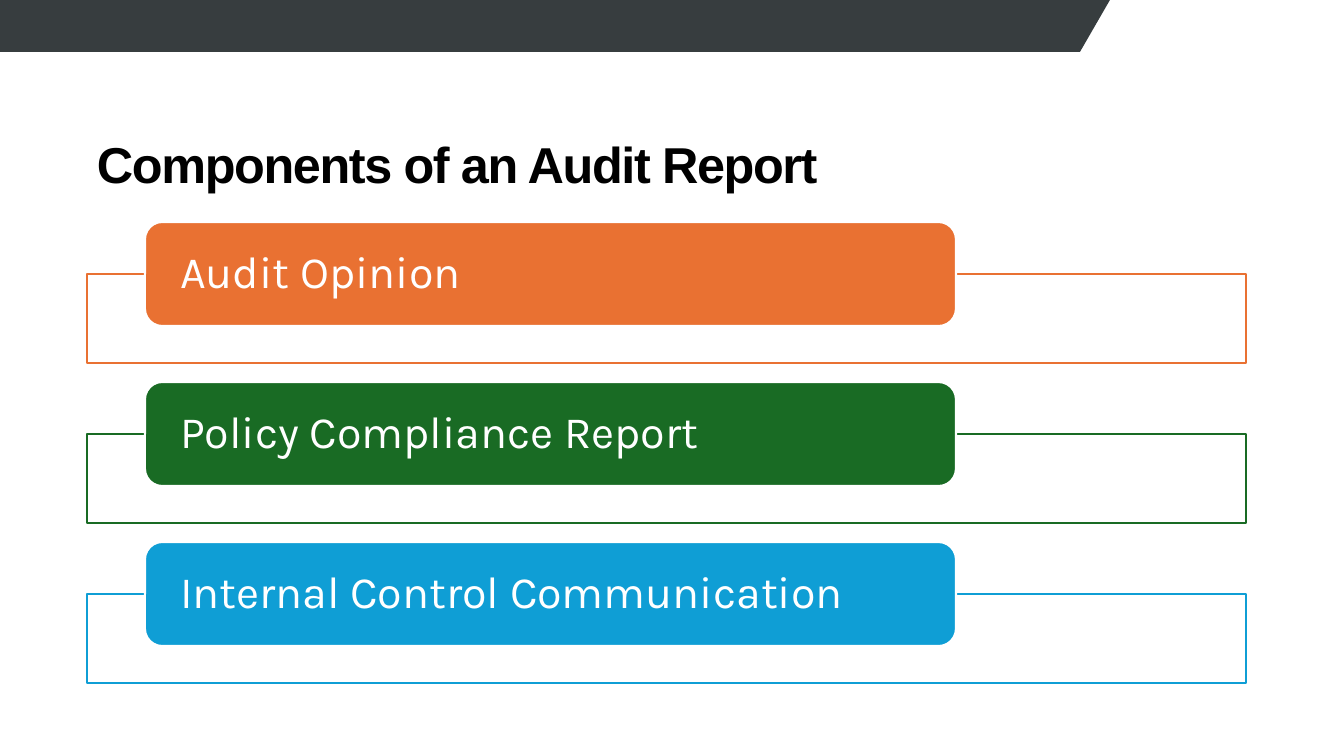
from pptx import Presentation
from pptx.dml.color import RGBColor
from pptx.enum.shapes import MSO_SHAPE
from pptx.enum.text import MSO_ANCHOR, MSO_AUTO_SIZE, PP_ALIGN
from pptx.util import Pt

RECTANGLE = MSO_SHAPE.RECTANGLE
ROUNDED = MSO_SHAPE.ROUNDED_RECTANGLE
MIDDLE, BOTTOM = MSO_ANCHOR.MIDDLE, MSO_ANCHOR.BOTTOM
FIXED_SIZE = MSO_AUTO_SIZE.NONE
LEFT = PP_ALIGN.LEFT

EMU_PER_PX = 914400 / 100.8
COLORS = {
    "black": "000000",
    "white": "FFFFFF",
    "banner": "373D3F",
    "orange": "E97132",
    "green": "196B24",
    "blue": "0F9ED5",
}
COMPONENTS = [
    ("Audit Opinion", "orange"),
    ("Policy Compliance Report", "green"),
    ("Internal Control Communication", "blue"),
]
FIRST_ROW_TOP = 222
ROW_PITCH = 160


def px(length):
    return round(length * EMU_PER_PX)


def color(name):
    return RGBColor.from_string(COLORS[name])


def write_text(shape, text, *, font, size, fill, anchor, bold=False,
               inset=10, inset_y=5, spacing=0):
    """Fill a shape with one left-aligned line; spacing is in points."""
    frame = shape.text_frame
    frame.word_wrap = True
    frame.auto_size = FIXED_SIZE
    frame.vertical_anchor = anchor
    frame.margin_left = frame.margin_right = px(inset)
    frame.margin_top = frame.margin_bottom = px(inset_y)
    para = frame.paragraphs[0]
    para.alignment = LEFT
    para.line_spacing = 0.9
    span = para.add_run()
    span.text = text
    span.font.name = font
    span.font.size = Pt(size)
    span.font.bold = bold
    span.font.color.rgb = color(fill)
    if spacing:
        span.font._element.set("spc", str(spacing * 100))


def add_box(page, kind, left, top, width, height, *, fill, line):
    box = page.shapes.add_shape(kind, px(left), px(top), px(width), px(height))
    box.shadow.inherit = False
    box.fill.solid()
    box.fill.fore_color.rgb = color(fill)
    box.line.color.rgb = color(line)
    box.line.width = Pt(1.5)
    return box


def add_banner(page):
    builder = page.shapes.build_freeform(0, 0, scale=EMU_PER_PX)
    builder.add_line_segments([(1110, 0), (1080, 52), (0, 52)], close=True)
    banner = builder.convert_to_shape()
    banner.shadow.inherit = False
    banner.fill.solid()
    banner.fill.fore_color.rgb = color("banner")
    banner.line.fill.background()


def add_title(page, text):
    title = page.shapes.title
    title.left, title.top = px(87), px(75)
    title.width, title.height = px(987), px(124)
    write_text(title, text, font="Arial", size=36, fill="black",
               anchor=BOTTOM, bold=True, spacing=-1)


def add_component(page, top, text, accent):
    add_box(page, RECTANGLE, 87, top + 52, 1159, 89, fill="white", line=accent)
    label = add_box(page, ROUNDED, 145, top, 811, 104, fill=accent, line="white")
    write_text(label, text, font="Karla", size=32, fill="white",
               anchor=MIDDLE, inset=30, inset_y=0)


def main():
    deck = Presentation()
    deck.slide_width, deck.slide_height = px(1344), px(756)
    page = deck.slides.add_slide(deck.slide_layouts[5])
    add_banner(page)
    add_title(page, "Components of an Audit Report")
    for row, (text, accent) in enumerate(COMPONENTS):
        add_component(page, FIRST_ROW_TOP + row * ROW_PITCH, text, accent)
    deck.save("out.pptx")


if __name__ == "__main__":
    main()
